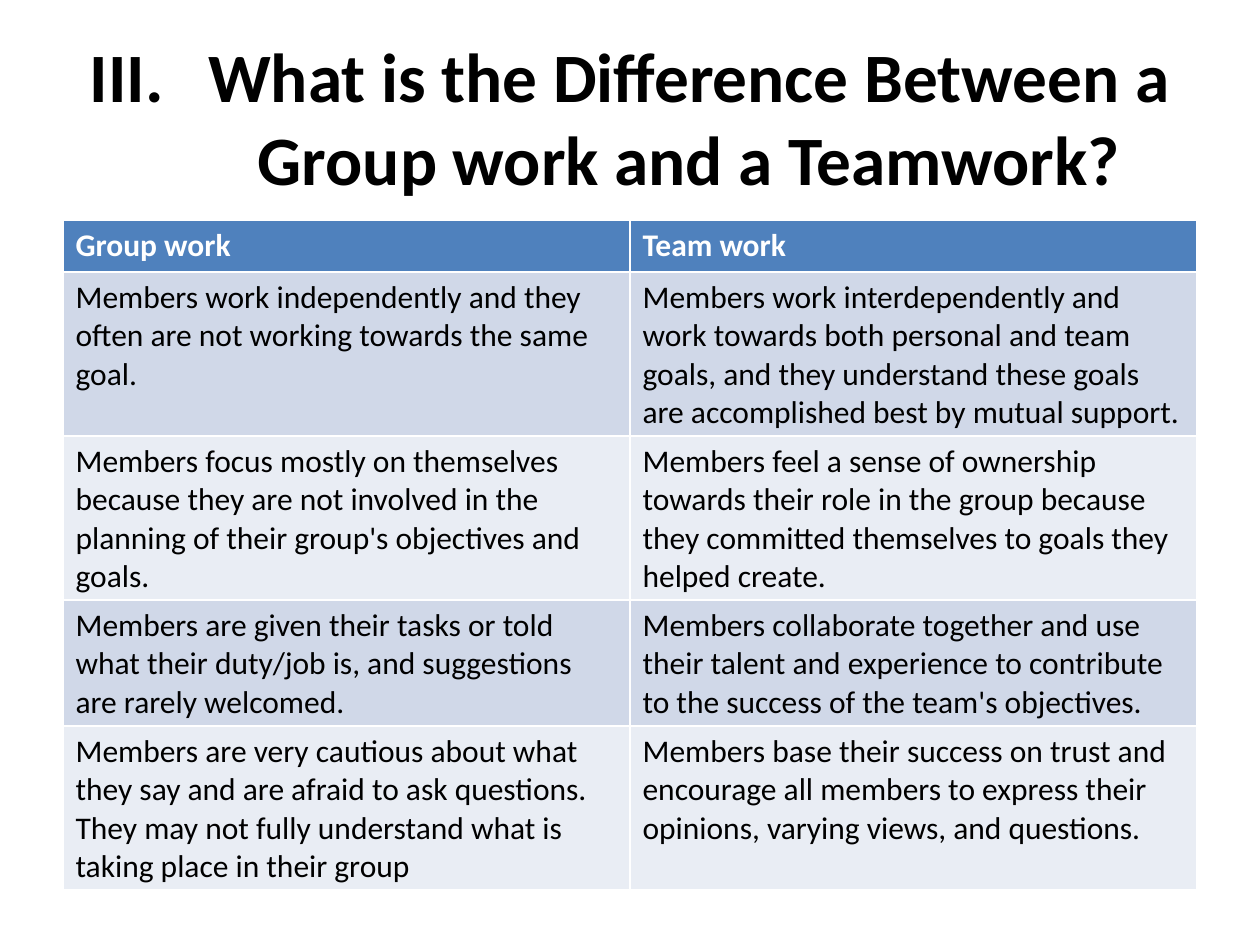
"""Build a slide that compares group work with teamwork in a table."""
from lxml.etree import SubElement
from pptx import Presentation
from pptx.dml.color import RGBColor
from pptx.enum.text import MSO_ANCHOR, PP_ALIGN
from pptx.oxml.ns import qn
from pptx.util import Inches, Pt

BLACK = RGBColor(0x00, 0x00, 0x00)
WHITE = RGBColor(0xFF, 0xFF, 0xFF)
HEADER_BLUE = RGBColor(0x4F, 0x81, 0xBD)
BANDS = [RGBColor(0xE9, 0xED, 0xF4), RGBColor(0xD0, 0xD8, 0xE8)]

COMPARISON = [
    ("Group work", "Team work"),
    ("Members work independently and they often are not working towards the same goal.",
     "Members work interdependently and work towards both personal and team goals, "
     "and they understand these goals are accomplished best by mutual support."),
    ("Members focus mostly on themselves because they are not involved in the planning "
     "of their group's objectives and goals.",
     "Members feel a sense of ownership towards their role in the group because they "
     "committed themselves to goals they helped create."),
    ("Members are given their tasks or told what their duty/job is, and suggestions "
     "are rarely welcomed.",
     "Members collaborate together and use their talent and experience to contribute "
     "to the success of the team's objectives."),
    ("Members are very cautious about what they say and are afraid to ask questions. "
     "They may not fully understand what is taking place in their group",
     "Members base their success on trust and encourage all members to express their "
     "opinions, varying views, and questions."),
]


def set_font(paragraph, size, color, bold):
    font = paragraph.font
    font.name = "Calibri"
    font.size = Pt(size)
    font.bold = bold
    font.color.rgb = color


prs = Presentation()
prs.slide_width, prs.slide_height = Inches(10), Inches(7.5)
slide = prs.slides.add_slide(prs.slide_layouts[6])

title = slide.shapes.add_textbox(Inches(0.5), Inches(0.3), Inches(9), Inches(1.25)).text_frame
title.word_wrap = True
title.vertical_anchor = MSO_ANCHOR.MIDDLE
heading = title.paragraphs[0]
heading.text = "What is the Difference Between a Group work and a Teamwork?"
heading.alignment = PP_ALIGN.CENTER
set_font(heading, 39.6, BLACK, True)
numbering = heading._p.get_or_add_pPr()
numbering.set("marL", str(Inches(0.94)))
numbering.set("indent", str(Inches(-0.94)))
numeral = SubElement(numbering, qn("a:buAutoNum"), type="romanUcPeriod", startAt="3")
numbering.insert(0, numeral)

comparison = slide.shapes.add_table(
    len(COMPARISON), 2, Inches(0.5), Inches(1.75), Inches(9), Inches(0.41 * len(COMPARISON))
).table
for row, statements in enumerate(COMPARISON):
    is_header = row == 0
    for column, statement in enumerate(statements):
        cell = comparison.cell(row, column)
        cell.text = statement
        cell.fill.solid()
        cell.fill.fore_color.rgb = HEADER_BLUE if is_header else BANDS[row % 2]
        set_font(cell.text_frame.paragraphs[0], 18, WHITE if is_header else BLACK, is_header)

prs.save("out.pptx")
